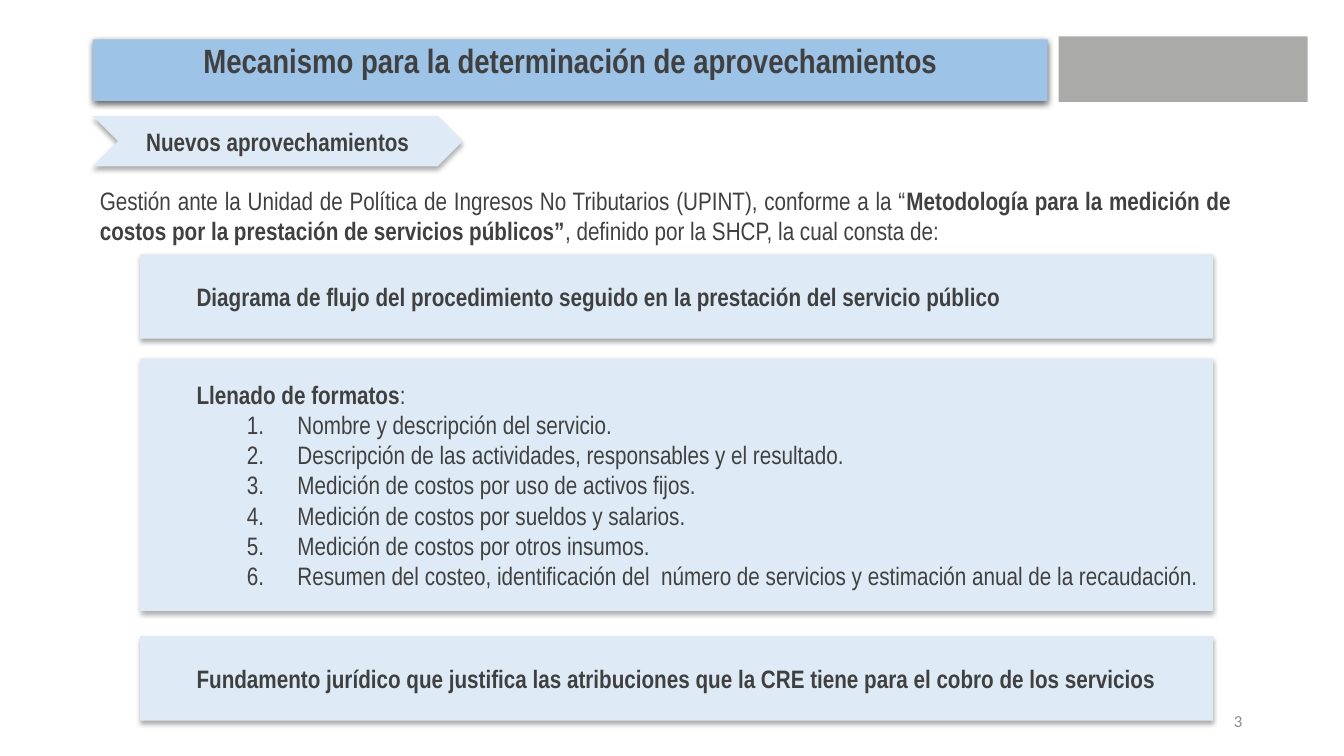
from dataclasses import dataclass

from lxml.etree import SubElement
from pptx import Presentation
from pptx.dml.color import RGBColor
from pptx.enum.shapes import MSO_SHAPE
from pptx.enum.text import MSO_ANCHOR, MSO_AUTO_SIZE, PP_ALIGN
from pptx.oxml.ns import qn
from pptx.util import Inches, Pt


@dataclass(frozen=True)
class Theme:
    font: str = "Arial Narrow"
    number_font: str = "Calibri"
    ink: str = "404040"
    muted: str = "8C8C8C"
    banner: str = "9DC3E6"
    panel: str = "DEEBF7"
    emblem: str = "AAAAA9"
    title_size: int = 24
    body_size: int = 18
    number_size: int = 12


theme = Theme()


def write(paragraph, text, size=theme.body_size, font=theme.font, color=theme.ink,
          bold=False, align=PP_ALIGN.LEFT, left=0, hanging=0):
    paragraph.alignment = align
    properties = paragraph._p.get_or_add_pPr()
    properties.set("marL", str(Inches(left)))
    properties.set("indent", str(-Inches(hanging)))
    run = paragraph.add_run()
    run.text = text
    run.font.size = Pt(size)
    run.font.name = font
    run.font.bold = bold
    run.font.color.rgb = RGBColor.from_string(color)


def paint(shape, fill, alpha=0, blur=0, distance=0, inset_x=0.06, inset_y=0.03):
    shape.fill.solid()
    shape.fill.fore_color.rgb = RGBColor.from_string(fill)
    shape.line.fill.background()
    shape.shadow.inherit = False
    if alpha:
        effects = shape._element.spPr.find(qn("a:effectLst"))
        shadow = SubElement(effects, qn("a:outerShdw"), blurRad=str(Pt(blur)),
                            dist=str(Pt(distance)), dir="5400000", rotWithShape="0")
        black = SubElement(shadow, qn("a:srgbClr"), val="000000")
        SubElement(black, qn("a:alpha"), val=str(alpha * 1000))
    frame = shape.text_frame
    frame.word_wrap = True
    frame.vertical_anchor = MSO_ANCHOR.MIDDLE
    frame.margin_left = frame.margin_right = Inches(inset_x)
    frame.margin_top = frame.margin_bottom = Inches(inset_y)
    return frame


prs = Presentation()
prs.slide_width, prs.slide_height = Inches(13.33), Inches(7.5)
slide = prs.slides.add_slide(prs.slide_layouts[5])
shapes = slide.shapes

title = shapes.title
title.left, title.top = Inches(0.92), Inches(0.39)
title.width, title.height = Inches(9.47), Inches(0.61)
heading = paint(title, theme.banner, alpha=63, blur=4.5, distance=1.5, inset_x=0.1, inset_y=0.05)
heading.vertical_anchor = MSO_ANCHOR.TOP
heading.auto_size = MSO_AUTO_SIZE.NONE
heading.paragraphs[0].line_spacing = 0.9
write(heading.paragraphs[0], "Mecanismo para la determinación de aprovechamientos",
      size=theme.title_size, bold=True, align=PP_ALIGN.CENTER)

emblem = shapes.add_shape(MSO_SHAPE.RECTANGLE, Inches(10.5), Inches(0.36), Inches(2.47), Inches(0.65))
paint(emblem, theme.emblem)

page_number = shapes.add_textbox(Inches(9.42), Inches(6.95), Inches(3), Inches(0.4)).text_frame
page_number.word_wrap = True
page_number.vertical_anchor = MSO_ANCHOR.MIDDLE
write(page_number.paragraphs[0], "3", size=theme.number_size, font=theme.number_font,
      color=theme.muted, align=PP_ALIGN.RIGHT)

intro = shapes.add_textbox(Inches(0.92), Inches(1.8), Inches(11.36), Inches(5.53)).text_frame
intro.word_wrap = True
intro.margin_left = intro.margin_right = Inches(0.07)
intro.margin_top = intro.margin_bottom = Inches(0.04)
for text, bold in (
    ("Gestión ante la Unidad de Política de Ingresos No Tributarios (UPINT), conforme a la “", False),
    ("Metodología para la medición de costos por la prestación de servicios públicos”", True),
    (", definido por la SHCP, la cual consta de:", False),
):
    write(intro.paragraphs[0], text, bold=bold, align=PP_ALIGN.JUSTIFY)

section = shapes.add_shape(MSO_SHAPE.CHEVRON, Inches(0.92), Inches(1.15), Inches(3.67), Inches(0.5))
section_label = paint(section, theme.panel, alpha=32, blur=3.5, distance=2.2, inset_x=0, inset_y=0.04)
write(section_label.paragraphs[0], "Nuevos aprovechamientos", bold=True, align=PP_ALIGN.CENTER)

formats = (
    "Nombre y descripción del servicio.",
    "Descripción de las actividades, responsables y el resultado.",
    "Medición de costos por uso de activos fijos.",
    "Medición de costos por sueldos y salarios.",
    "Medición de costos por otros insumos.",
    "Resumen del costeo, identificación del  número de servicios y estimación anual de la recaudación.",
)
requirements = (
    (2.52, 0.84, "Diagrama de flujo del procedimiento seguido en la prestación del servicio público", "", ()),
    (3.56, 2.5, "Llenado de formatos", ":", formats),
    (6.31, 0.84, "Fundamento jurídico que justifica las atribuciones que la CRE tiene "
                 "para el cobro de los servicios", "", ()),
)
for top, height, requirement, ending, steps in requirements:
    panel = shapes.add_shape(MSO_SHAPE.RECTANGLE, Inches(1.39), Inches(top), Inches(10.64), Inches(height))
    content = paint(panel, theme.panel, alpha=32, blur=3.5, distance=2.2)
    write(content.paragraphs[0], requirement, bold=True, left=0.5)
    if ending:
        write(content.paragraphs[0], ending, left=0.5)
    for step in steps:
        item = content.add_paragraph()
        write(item, step, left=1.5, hanging=0.5)
        SubElement(item._p.get_or_add_pPr(), qn("a:buAutoNum"), type="arabicPeriod")

prs.save("out.pptx")
